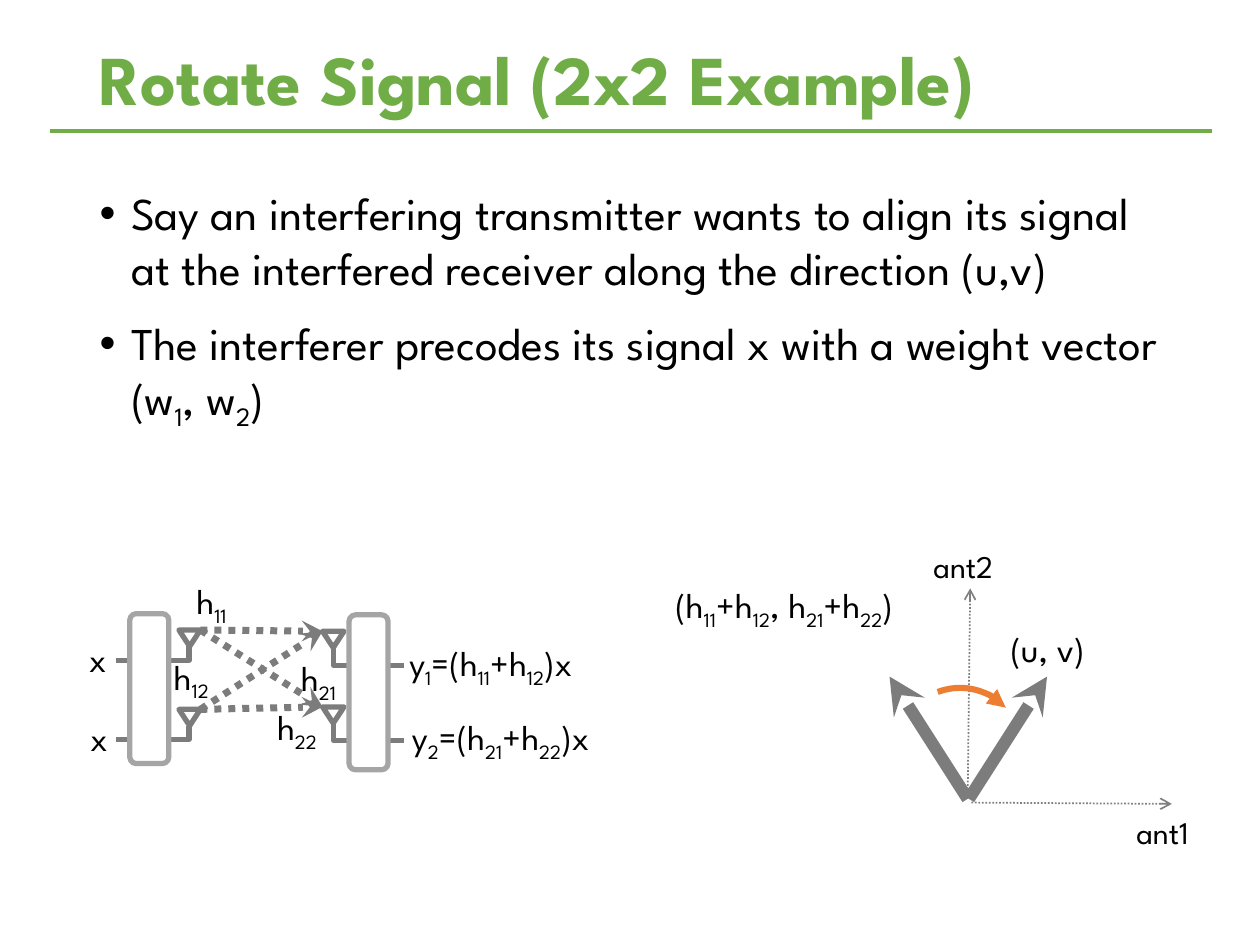
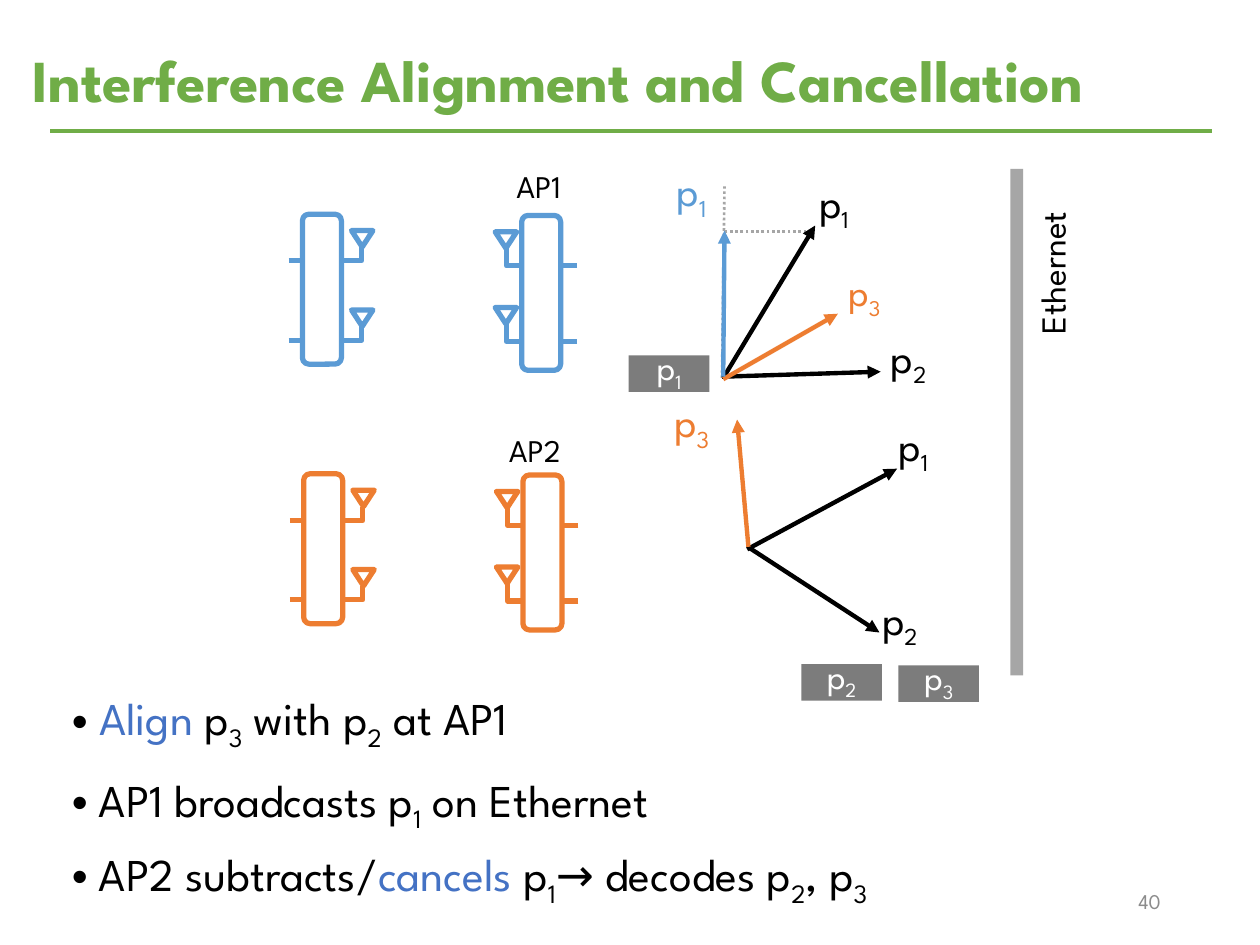
from pptx import Presentation
from pptx.dml.color import RGBColor
from pptx.enum.dml import MSO_LINE
from pptx.enum.shapes import MSO_CONNECTOR, MSO_SHAPE
from pptx.enum.text import MSO_ANCHOR, MSO_AUTO_SIZE, PP_ALIGN
from pptx.oxml.ns import qn
from pptx.util import Pt
from lxml.etree import SubElement

PX = 9144
FONT = "League Spartan"
COLOURS = {
    "green": "70AD47", "black": "000000", "white": "FFFFFF", "grey": "7C7C7C",
    "axis": "808080", "frame": "A5A5A5", "guide": "A6A6A6", "number": "8C8C8C",
    "blue": "5B9BD5", "orange": "ED7D31", "accent": "4472C4",
}


def rgb(colour):
    return RGBColor.from_string(COLOURS[colour])


def apply(target, values):
    for key, value in values.items():
        setattr(target, key, value)


def write(paragraph, pieces, size, bold=False):
    for marked, colour in pieces:
        for index, words in enumerate(marked.split("|")):
            if not words:
                continue
            run = paragraph.add_run()
            run.text = words
            apply(run.font, {"name": FONT, "size": Pt(size), "bold": bold})
            run.font.color.rgb = rgb(colour)
            is_subscript = index % 2
            if is_subscript:
                run.font._element.set("baseline", "-25000")


def add_bullet(paragraph, hang):
    properties = paragraph._p.get_or_add_pPr()
    properties.set("marL", str(hang * PX))
    properties.set("indent", str(-hang * PX))
    SubElement(properties, qn("a:buFont"), typeface="Arial")
    SubElement(properties, qn("a:buChar"), char="•")


def add_arrowhead(line_owner, kind):
    SubElement(line_owner.line._get_or_add_ln(), qn("a:tailEnd"), type=kind)


def place(target, left, top, width, height):
    apply(target, {"left": left * PX, "top": top * PX,
                   "width": width * PX, "height": height * PX})


class Region:
    def __init__(self, slide, left, top):
        self.shapes, self.left, self.top = slide.shapes, left, top

    def at(self, x, y):
        return (self.left + x) * PX, (self.top + y) * PX

    def style(self, part, fill=None, line=None, weight=3):
        part.shadow.inherit = False
        if fill:
            part.fill.solid()
            part.fill.fore_color.rgb = rgb(fill)
        else:
            part.fill.background()
        if line:
            part.line.color.rgb = rgb(line)
            part.line.width = Pt(weight)
        else:
            part.line.fill.background()
        return part

    def block(self, kind, x, y, width, height, **look):
        part = self.shapes.add_shape(kind, *self.at(x, y), width * PX, height * PX)
        return self.style(part, **look)

    def wire(self, start, corner, end, colour):
        outline = self.shapes.build_freeform(*self.at(*start), scale=1.0)
        outline.add_line_segments([self.at(*corner), self.at(*end)], close=False)
        self.style(outline.convert_to_shape(), line=colour)

    def line(self, start, end, colour, weight, head=None, dotted=False):
        stroke = self.shapes.add_connector(
            MSO_CONNECTOR.STRAIGHT, *self.at(*start), *self.at(*end))
        stroke.line.color.rgb = rgb(colour)
        stroke.line.width = Pt(weight)
        if dotted:
            stroke.line.dash_style = MSO_LINE.ROUND_DOT
        if head:
            add_arrowhead(stroke, head)
        SubElement(stroke._element.spPr, qn("a:effectLst"))

    def label(self, marked, x, y, width, size=20, colour="black", height=44):
        caption = self.shapes.add_textbox(*self.at(x, y), width * PX, height * PX)
        caption.text_frame.word_wrap = True
        write(caption.text_frame.paragraphs[0], [(marked, colour)], size)
        return caption

    def packet(self, marked, x, y):
        chip = self.block(MSO_SHAPE.RECTANGLE, x, y, 64, 29, fill="grey")
        apply(chip.text_frame, {
            "margin_left": 0, "margin_right": 0, "margin_top": 0,
            "margin_bottom": 7 * PX, "vertical_anchor": MSO_ANCHOR.MIDDLE})
        paragraph = chip.text_frame.paragraphs[0]
        paragraph.alignment = PP_ALIGN.CENTER
        write(paragraph, [(marked, "white")], 20)


def add_titled_slide(deck, heading, size, box):
    slide = deck.slides.add_slide(deck.slide_layouts[1])
    title = slide.shapes.title
    place(title, *box)
    apply(title.text_frame, {"vertical_anchor": MSO_ANCHOR.MIDDLE, "word_wrap": True,
                             "auto_size": MSO_AUTO_SIZE.NONE})
    paragraph = title.text_frame.paragraphs[0]
    apply(paragraph, {"alignment": PP_ALIGN.LEFT, "line_spacing": 0.9})
    write(paragraph, [(heading, "green")], size, bold=True)
    Region(slide, 40, 104).line((0, 0), (922, 0), "green", 2.75)
    return slide


def fill_body(slide, box, points, hang):
    body = slide.placeholders[1]
    place(body, *box)
    frame = body.text_frame
    apply(frame, {"word_wrap": True, "auto_size": MSO_AUTO_SIZE.NONE})
    for index, (gap, pieces) in enumerate(points):
        paragraph = frame.add_paragraph() if index else frame.paragraphs[0]
        paragraph.space_before = Pt(gap)
        add_bullet(paragraph, hang)
        write(paragraph, pieces, 26)


def draw_antenna_pair(slide, left, top, colour, frame):
    pair = Region(slide, left, top)
    sender = [(50, 13 + drop, 0, 58, 37 + drop) for drop in (0, 63)]
    receiver = [(164, 14 + drop, 229, 173, 41 + drop) for drop in (0, 60)]
    for x, y, outer, mast, foot in sender + receiver:
        antenna = pair.block(MSO_SHAPE.ISOSCELES_TRIANGLE, x, y, 17, 13,
                             fill="white", line=colour)
        antenna.rotation = 180
        pair.wire((outer, foot), (mast, foot), (mast, y + 13), colour)
    for x, y, height in ((185, 1, 123), (11, 0, 119)):
        pair.block(MSO_SHAPE.ROUNDED_RECTANGLE, x, y, 31, height,
                   fill="white", line=frame)


def draw_channel(slide, left, top):
    draw_antenna_pair(slide, left, top, "grey", "frame")
    channel = Region(slide, left, top)
    for start in ((67, 13), (67, 76)):
        for end in ((164, 14), (164, 74)):
            channel.line(start, end, "grey", 4, "stealth", dotted=True)
    for marked, x, y, width in (
            ("x", -31, 14, 34), ("x", -30, 77, 34),
            ("h|11|", 54, -32, 58), ("h|12|", 36, 28, 58),
            ("h|21|", 137, 29, 58), ("h|22|", 118, 68, 58),
            ("y|1|=(h|11|+h|12|)x", 223, 17, 190),
            ("y|2|=(h|21|+h|22|)x", 225, 76, 190)):
        channel.label(marked, x, y, width)


def draw_rotation(slide, left, top):
    plane = Region(slide, left, top)
    plane.line((1, 0), (63, -97), "grey", 7, "stealth")
    plane.line((0, -2), (2, -167), "axis", 1, "arrow", dotted=True)
    plane.line((3, 3), (162, 4), "axis", 1, "arrow", dotted=True)
    plane.line((0, 0), (-62, -97), "grey", 7, "stealth")
    turn = plane.block(MSO_SHAPE.ARC, -56, -88, 100, 100, line="orange", weight=3.5)
    turn.rotation = 322.1
    turn.adjustments[0], turn.adjustments[1] = 172.3, 212.71
    add_arrowhead(turn, "triangle")
    plane.label("(u, v)", 24, -141, 89)
    plane.label("(h|11|+h|12|, h|21|+h|22|)", -242, -176, 242)
    plane.label("ant1", 124, 6, 75, size=18)
    plane.label("ant2", -37, -205, 75, size=18)


def draw_vectors(slide, left, top, vectors, labels, packets, guides=()):
    plot = Region(slide, left, top)
    for start, end in guides:
        plot.line(start, end, "guide", 1.5, dotted=True)
    for start, end, colour in vectors:
        plot.line(start, end, colour, 2.5, "triangle")
    for marked, x, y, size, colour in labels:
        plot.label(marked, x, y, 78, size, colour)
    for marked, x, y in packets:
        plot.packet(marked, x, y)


def draw_ethernet(slide, left, top):
    cable = Region(slide, left, top)
    cable.block(MSO_SHAPE.RECTANGLE, 0, 0, 10, 402, fill="guide")
    cable.label("Ethernet", -55, 31, 176).rotation = 270


def build_rotate_slide(deck):
    slide = add_titled_slide(deck, "Rotate Signal (2x2 Example)", 40, (69, 29, 862, 74))
    fill_body(slide, (69, 142, 862, 534), [
        (12, [("Say an interfering transmitter wants to align its signal at the "
               "interfered receiver along the direction (u,v)", "black")]),
        (12, [("The interferer precodes its signal x with a weight vector "
               "(w|1|, w|2|)", "black")]),
    ], hang=25)
    draw_channel(slide, 92, 487)
    draw_rotation(slide, 768, 634)


def build_alignment_slide(deck):
    slide = add_titled_slide(deck, "Interference Alignment and Cancellation", 34,
                             (16, 29, 970, 74))
    fill_body(slide, (47, 543, 940, 166), [
        (0, [(" ", "black"), ("Align", "accent"), (" p|3| with p|2| at AP1", "black")]),
        (11, [(" AP1 broadcasts p|1| on Ethernet", "black")]),
        (7, [(" AP2 subtracts/", "black"), ("cancels ", "accent"),
             ("p|1|→ decodes p|2|, p|3|", "black")]),
    ], hang=0)
    draw_ethernet(slide, 802, 134)
    draw_vectors(
        slide, 574, 300,
        vectors=[((-1, -1), (125, -5), "black"), ((0, 0), (73, -121), "black"),
                 ((0, 1), (91, -51), "orange"), ((0, -1), (1, -117), "blue")],
        labels=[(" p|1|", -55, -174, 24, "blue"), (" p|3|", 82, -92, 22, "orange"),
                (" p|1|", 58, -165, 24, "black"), (" p|2|", 115, -42, 24, "black")],
        packets=[("p|1|", -75, -18)],
        guides=[((-1, 0), (1, -152)), ((70, -116), (0, -116))])
    draw_vectors(
        slide, 594, 435,
        vectors=[((-1, 1), (118, -63), "black"), ((1, 0), (104, 67), "black"),
                 ((0, -1), (-9, -102), "orange")],
        labels=[(" p|3|", -77, -126, 24, "orange"), (" p|1|", 101, -107, 24, "black"),
                (" p|2|", 88, 31, 24, "black")],
        packets=[("p|2|", 42, 92), ("p|3|", 119, 93)])
    draw_antenna_pair(slide, 230, 376, "orange", "orange")
    draw_antenna_pair(slide, 229, 170, "blue", "blue")
    page = Region(slide, 0, 0)
    page.label("AP1", 400, 128, 68, size=18)
    page.label("AP2", 394, 337, 68, size=18)
    number = page.label("40", 706, 695, 225, size=12, colour="number", height=40)
    number.text_frame.vertical_anchor = MSO_ANCHOR.MIDDLE
    number.text_frame.paragraphs[0].alignment = PP_ALIGN.RIGHT


def main():
    deck = Presentation()
    apply(deck, {"slide_width": 1000 * PX, "slide_height": 750 * PX})
    build_rotate_slide(deck)
    build_alignment_slide(deck)
    deck.save("out.pptx")


if __name__ == "__main__":
    main()
